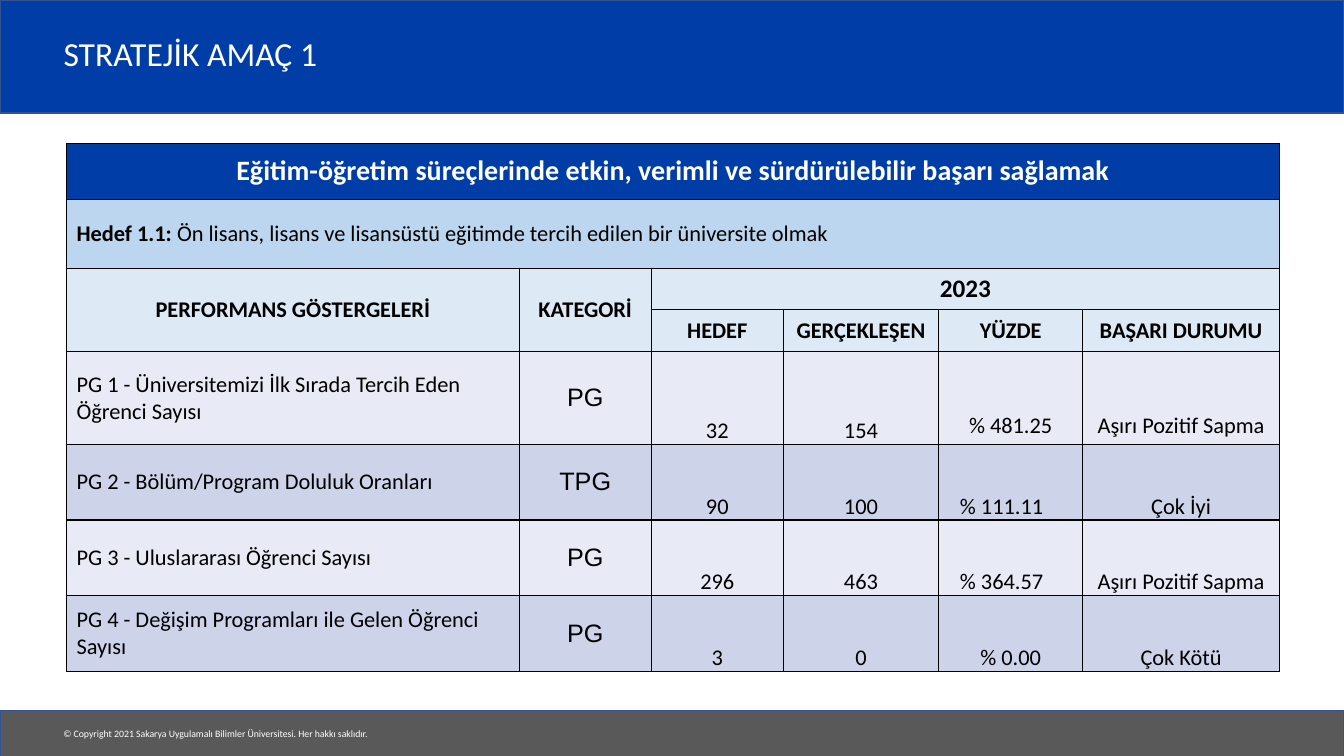
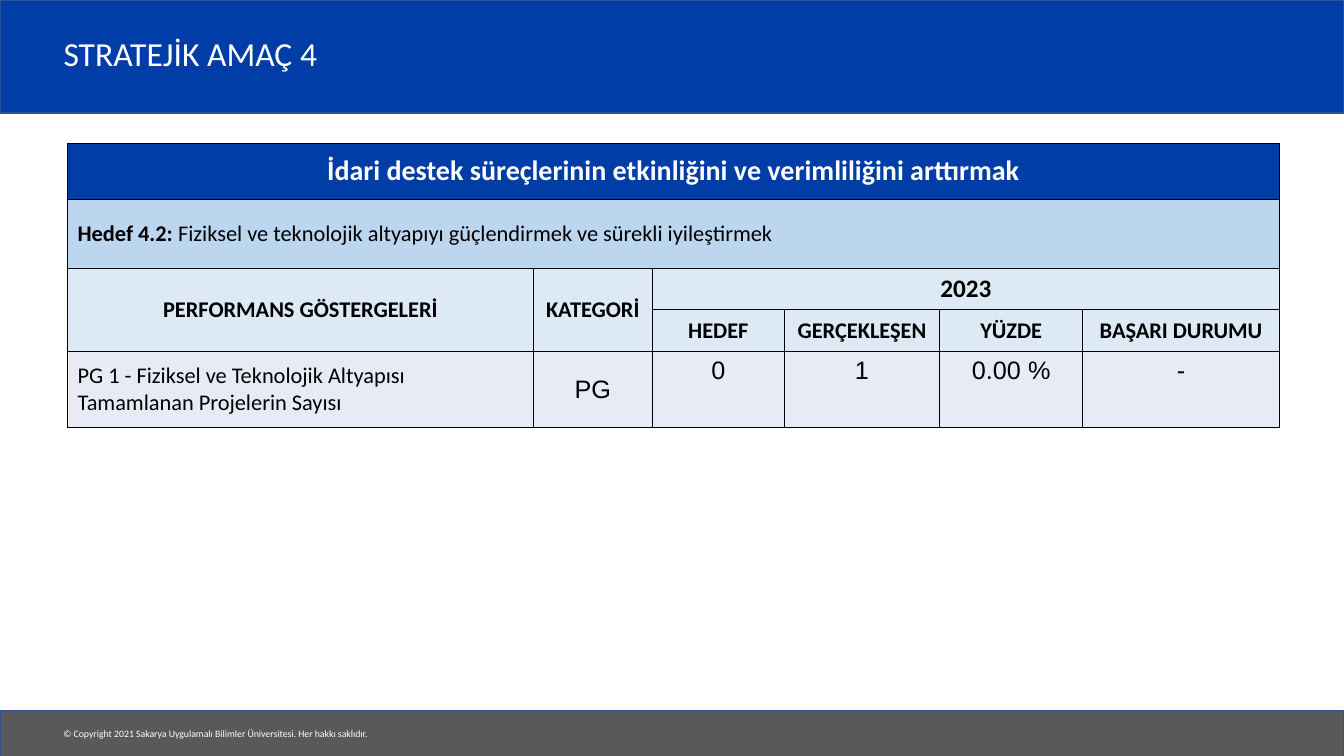
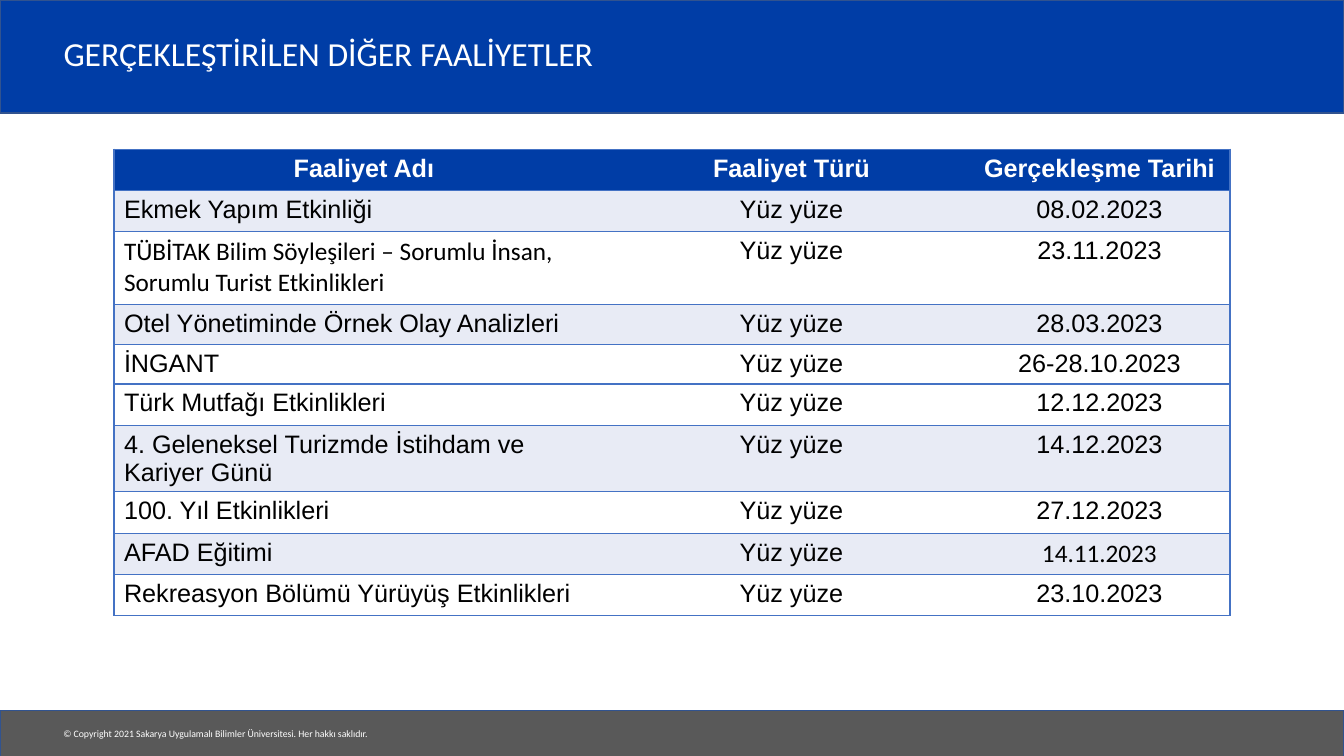
from lxml.etree import SubElement
from pptx import Presentation
from pptx.dml.color import RGBColor
from pptx.enum.shapes import MSO_SHAPE
from pptx.enum.text import MSO_ANCHOR, MSO_AUTO_SIZE, PP_ALIGN
from pptx.oxml.ns import qn
from pptx.util import Inches, Pt

NAVY, GREY, OUTLINE = "003DA6", "595959", "31538F"
SKY, PALE, LIGHT, MID = "BBD6EE", "DDEAF6", "E8EBF5", "CDD4EA"
BLACK, WHITE, RULE = "000000", "FFFFFF", "4472C4"
COPYRIGHT = "© Copyright 2021 Sakarya Uygulamalı Bilimler Üniversitesi. Her hakkı saklıdır."


def color(value):
    return RGBColor.from_string(value)


class Report:
    def __init__(self):
        self.deck = Presentation()
        self.deck.slide_width = Inches(13.33)
        self.deck.slide_height = Inches(7.5)
        self.layout = self.deck.slide_layouts[5]
        self.page = None

    def add_page(self, title):
        first = self.page is None
        self.page = self.deck.slides.add_slide(self.layout)
        if first:
            self.add_layout_bands()
        box = self.page.shapes.title
        box.left, box.top = Inches(0.53), Inches(0.19)
        box.width, box.height = Inches(11.03), Inches(0.73)
        frame = box.text_frame
        frame.auto_size = MSO_AUTO_SIZE.NONE
        frame.vertical_anchor = MSO_ANCHOR.MIDDLE
        frame.text = title
        paragraph = frame.paragraphs[0]
        paragraph.line_spacing = 0.9
        self.style(paragraph, 24, WHITE)

    def add_layout_bands(self):
        shapes = [
            self.band(0, 1.12, NAVY),
            self.band(7.05, 0.46, GREY),
            self.footer(),
        ]
        for shape in shapes:
            self.layout.shapes._spTree.append(shape._element)

    def band(self, top, height, fill):
        shape = self.page.shapes.add_shape(
            MSO_SHAPE.RECTANGLE, 0, Inches(top), self.deck.slide_width, Inches(height)
        )
        shape.shadow.inherit = False
        shape.fill.solid()
        shape.fill.fore_color.rgb = color(fill)
        shape.line.color.rgb = color(OUTLINE)
        shape.line.width = Pt(1)
        return shape

    def footer(self):
        box = self.page.shapes.add_textbox(
            Inches(0.53), Inches(7.17), Inches(3.29), Inches(0.22)
        )
        box.text_frame.word_wrap = True
        box.text_frame.text = COPYRIGHT
        self.style(box.text_frame.paragraphs[0], 7, WHITE)
        return box

    def style(self, paragraph, size, ink, font="Calibri", bold=False, align=PP_ALIGN.LEFT):
        paragraph.alignment = align
        paragraph.font.name = font
        paragraph.font.size = Pt(size)
        paragraph.font.bold = bold
        paragraph.font.color.rgb = color(ink)

    def table(self, left, top, widths, heights):
        table = self.page.shapes.add_table(
            len(heights), len(widths), Inches(left), Inches(top),
            Inches(sum(widths)), Inches(sum(heights)),
        ).table
        table.first_row = table.horz_banding = False
        for column, width in zip(table.columns, widths):
            column.width = Inches(width)
        for row, height in zip(table.rows, heights):
            row.height = Inches(height)
        return table

    def borders(self, table, ink, inner_verticals=True):
        last = len(table.columns) - 1
        for row in table.rows:
            for index, cell in enumerate(row.cells):
                visible = {
                    "L": inner_verticals or index == 0,
                    "R": inner_verticals or index == last,
                    "T": True,
                    "B": True,
                }
                properties = cell._tc.get_or_add_tcPr()
                for side, shown in visible.items():
                    line = SubElement(properties, qn(f"a:ln{side}"), w=str(Pt(1)))
                    if shown:
                        fill = SubElement(line, qn("a:solidFill"))
                        SubElement(fill, qn("a:srgbClr"), val=ink)
                    else:
                        SubElement(line, qn("a:noFill"))

    def cell(self, cell, text, fill, size=16, ink=BLACK, font="Calibri", bold=False,
             align=PP_ALIGN.CENTER, anchor=MSO_ANCHOR.MIDDLE, lead="", margins=None):
        cell.fill.solid()
        cell.fill.fore_color.rgb = color(fill)
        cell.vertical_anchor = anchor
        if margins:
            cell.margin_left, cell.margin_top, cell.margin_right, cell.margin_bottom = map(
                Inches, margins
            )
        paragraph = cell.text_frame.paragraphs[0]
        if lead:
            span = paragraph.add_run()
            span.text = lead
            span.font.bold = True
        paragraph.add_run().text = text
        self.style(paragraph, size, ink, font, bold, align)

    def goal_table(self, left, widths, heights, aim, goal_number, goal, indicators, value_style):
        table = self.table(left, 1.42, widths, [0.56, 0.68, 0.41, 0.42] + heights)
        self.borders(table, BLACK)
        for start, end in [((0, 0), (0, 5)), ((1, 0), (1, 5)), ((2, 0), (3, 0)),
                           ((2, 1), (3, 1)), ((2, 2), (2, 5))]:
            table.cell(*start).merge(table.cell(*end))
        self.cell(table.cell(0, 0), aim, NAVY, 20, WHITE, bold=True)
        self.cell(table.cell(1, 0), goal, SKY, align=PP_ALIGN.LEFT, lead=f"{goal_number} ")
        self.cell(table.cell(2, 0), "PERFORMANS GÖSTERGELERİ", PALE, bold=True)
        self.cell(table.cell(2, 1), "KATEGORİ", PALE, bold=True)
        self.cell(table.cell(2, 2), "2023", PALE, 18, bold=True)
        for column, heading in enumerate(["HEDEF", "GERÇEKLEŞEN", "YÜZDE", "BAŞARI DURUMU"], 2):
            self.cell(table.cell(3, column), heading, PALE, bold=True)
        for row, (name, category, *values) in enumerate(indicators, 4):
            fill = MID if row % 2 else LIGHT
            self.cell(table.cell(row, 0), name, fill, align=PP_ALIGN.LEFT)
            self.cell(table.cell(row, 1), category, fill, 18, font="Arial")
            for column, value in enumerate(values, 2):
                self.cell(table.cell(row, column), value, fill, **value_style)
        return table

    def activity_table(self, top, heights, activities, calibri, header=None):
        table = self.table(1.13, top, [4.96, 3.52, 2.59], heights)
        self.borders(table, RULE, inner_verticals=False)
        if header:
            for column, heading in enumerate(header):
                self.cell(table.cell(0, column), heading, NAVY, 18, WHITE, "Arial", True,
                          anchor=MSO_ANCHOR.TOP)
        for row, (name, date, fill) in enumerate(activities, 1 if header else 0):
            for column, text in enumerate([name, "Yüz yüze", date]):
                self.cell(
                    table.cell(row, column), text, fill, 18,
                    font="Calibri" if text in calibri else "Arial",
                    align=PP_ALIGN.CENTER if column else PP_ALIGN.LEFT,
                    anchor=MSO_ANCHOR.TOP,
                )


def main():
    report = Report()

    report.add_page("STRATEJİK AMAÇ 1")
    table = report.goal_table(
        0.66, [4.49, 1.31, 1.31, 1.54, 1.43, 1.95], [0.92, 0.75, 0.75, 0.75],
        "Eğitim-öğretim süreçlerinde etkin, verimli ve sürdürülebilir başarı sağlamak",
        "Hedef 1.1:", "Ön lisans, lisans ve lisansüstü eğitimde tercih edilen bir üniversite olmak",
        [
            ("PG 1 - Üniversitemizi İlk Sırada Tercih Eden Öğrenci Sayısı", "PG",
             "32", "154", "% 481.25", "Aşırı Pozitif Sapma"),
            ("PG 2 - Bölüm/Program Doluluk Oranları", "TPG", "90", "100", "% 111.11", "Çok İyi"),
            ("PG 3 - Uluslararası Öğrenci Sayısı", "PG",
             "296", "463", "% 364.57", "Aşırı Pozitif Sapma"),
            ("PG 4 - Değişim Programları ile Gelen Öğrenci Sayısı", "PG",
             "3", "0", "% 0.00", "Çok Kötü"),
        ],
        {"anchor": MSO_ANCHOR.BOTTOM, "margins": (0.01, 0.01, 0.01, 0)},
    )
    for column in (4, 5):
        table.cell(4, column).margin_bottom = Inches(0.05)
    for row in (5, 6):
        table.cell(row, 4).margin_right = Inches(0.19)

    report.add_page("STRATEJİK AMAÇ 4")
    report.goal_table(
        0.67, [4.62, 1.18, 1.31, 1.54, 1.42, 1.95], [0.75],
        "İdari destek süreçlerinin etkinliğini ve verimliliğini arttırmak",
        "Hedef 4.2:", "Fiziksel ve teknolojik altyapıyı güçlendirmek ve sürekli iyileştirmek",
        [("PG 1 - Fiziksel ve Teknolojik Altyapısı Tamamlanan Projelerin Sayısı", "PG",
          "0", "1", "0.00 %", "-")],
        {"anchor": MSO_ANCHOR.TOP, "size": 18, "font": "Arial"},
    )

    report.add_page("GERÇEKLEŞTİRİLEN DİĞER FAALİYETLER")
    talks = "TÜBİTAK Bilim Söyleşileri – Sorumlu İnsan, Sorumlu Turist Etkinlikleri"
    calibri = {talks, "14.11.2023"}
    report.activity_table(
        1.48, [0.41, 0.41, 0.72, 0.4, 0.4],
        [
            ("Ekmek Yapım Etkinliği", "08.02.2023", LIGHT),
            (talks, "23.11.2023", WHITE),
            ("Otel Yönetiminde Örnek Olay Analizleri", "28.03.2023", LIGHT),
            ("İNGANT", "26-28.10.2023", WHITE),
        ],
        calibri,
        ["Faaliyet Adı", "Faaliyet Türü", "Gerçekleşme Tarihi"],
    )
    report.activity_table(
        3.81, [0.41, 0.66, 0.41, 0.41, 0.41],
        [
            ("Türk Mutfağı Etkinlikleri", "12.12.2023", WHITE),
            ("4. Geleneksel Turizmde İstihdam ve Kariyer Günü", "14.12.2023", LIGHT),
            ("100. Yıl Etkinlikleri", "27.12.2023", WHITE),
            ("AFAD Eğitimi", "14.11.2023", LIGHT),
            ("Rekreasyon Bölümü Yürüyüş Etkinlikleri", "23.10.2023", WHITE),
        ],
        calibri,
    )

    report.deck.save("out.pptx")


if __name__ == "__main__":
    main()
